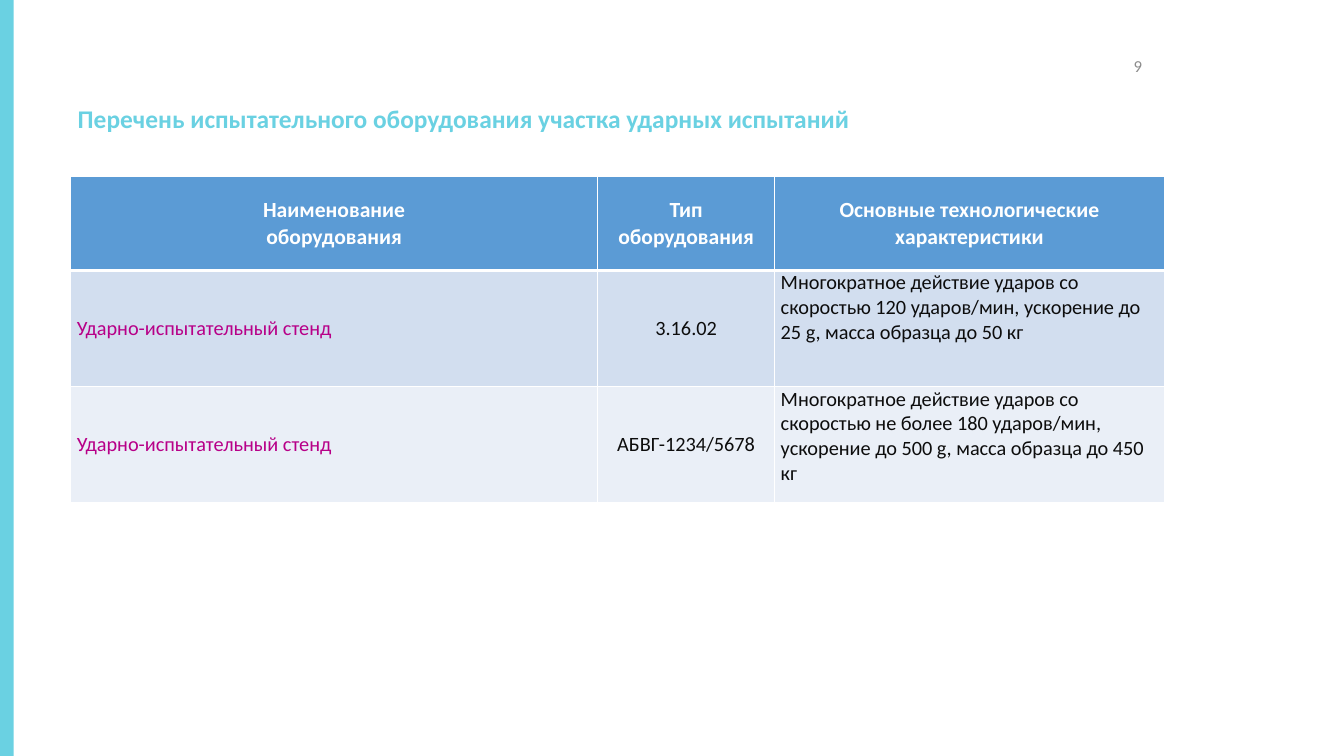
from lxml.etree import SubElement
from pptx import Presentation
from pptx.dml.color import RGBColor as RGB
from pptx.enum.shapes import MSO_SHAPE as SHAPE
from pptx.enum.text import MSO_ANCHOR as ANCHOR, MSO_AUTO_SIZE as AUTO, PP_ALIGN as ALIGN
from pptx.oxml.ns import qn
from pptx.util import Inches, Pt

COLORS = {
    "aqua": "6AD1E2", "gray": "8C8C8C", "white": "FFFFFF", "blue": "5B9BD5",
    "pink": "B70088", "ink": "0D0D0D", "band": "D2DEEF", "pale": "EAEFF7",
}
WIDTHS = [5.77, 1.93, 4.27]
HEIGHTS = [1.03, 1.27, 1.27]
FILLS = ["blue", "band", "pale"]
ALIGNS = [ALIGN.LEFT, ALIGN.CENTER, ALIGN.LEFT]
INKS = ["pink", "ink", "ink"]
ROWS = [
    ["Наименование\nоборудования", "Тип\nоборудования",
     "Основные технологические характеристики"],
    ["Ударно-испытательный стенд", "3.16.02",
     "Многократное действие ударов со скоростью 120 ударов/мин, "
     "ускорение до 25 g, масса образца до 50 кг"],
    ["Ударно-испытательный стенд", "АБВГ-1234/5678",
     "Многократное действие ударов со скоростью не более 180 ударов/мин, "
     "ускорение до 500 g, масса образца до 450 кг"],
]


def color(name):
    """Return the named colour."""
    return RGB.from_string(COLORS[name])


def write(frame, text, size, ink, align=ALIGN.LEFT, bold=False):
    """Fill a text frame with one styled paragraph."""
    para = frame.paragraphs[0]
    para.text = text
    para.alignment = align
    font = para.font
    font.name, font.size, font.bold = "Calibri", Pt(size), bold
    font.color.rgb = color(ink)
    return para


def add_bar(slide):
    """Draw the stripe along the left edge."""
    bar = slide.shapes.add_shape(SHAPE.RECTANGLE, 0, 0, Inches(0.15), Inches(8.27))
    bar.shadow.inherit = False
    bar.fill.solid()
    bar.fill.fore_color.rgb = color("aqua")
    bar.line.fill.background()


def set_title(slide, text):
    """Place and style the title."""
    title = slide.shapes.title
    title.left, title.top = Inches(0.75), Inches(1.03)
    title.width, title.height = Inches(10.34), Inches(0.58)
    frame = title.text_frame
    frame.auto_size = AUTO.NONE
    frame.vertical_anchor = ANCHOR.MIDDLE
    write(frame, text, 20, "aqua", bold=True).line_spacing = 0.9


def add_number(slide, text):
    """Add the page number."""
    box = slide.shapes.add_textbox(Inches(10.63), Inches(0.5), Inches(1.96), Inches(0.44))
    frame = box.text_frame
    frame.word_wrap = True
    frame.vertical_anchor = ANCHOR.MIDDLE
    write(frame, text, 13.2, "gray", ALIGN.RIGHT)


def set_edges(cell, top, bottom):
    """Give a cell white borders, with its own top and bottom widths."""
    props = cell._tc.get_or_add_tcPr()
    for side, width in zip("LRTB", (1, 1, top, bottom)):
        line = SubElement(props, qn(f"a:ln{side}"), w=str(Pt(width)))
        fill = SubElement(line, qn("a:solidFill"))
        SubElement(fill, qn("a:srgbClr"), val=COLORS["white"])


def set_cell(cell, text, row, col):
    """Style one cell by its row and column."""
    head = row == 0
    set_edges(cell, 3 if row == 1 else 1, 3 if head else 1)
    cell.fill.solid()
    cell.fill.fore_color.rgb = color(FILLS[row])
    if not (head and col == 0):
        cell.margin_left = cell.margin_right = Inches(0.07)
        cell.margin_top = cell.margin_bottom = 0
    cell.vertical_anchor = ANCHOR.MIDDLE if head or col < 2 else ANCHOR.TOP
    if head:
        write(cell.text_frame, text, 17, "white", ALIGN.CENTER, True)
    else:
        write(cell.text_frame, text, 16, INKS[col], ALIGNS[col])


def add_grid(slide):
    """Add the equipment table."""
    frame = slide.shapes.add_table(
        len(ROWS), len(WIDTHS), Inches(0.77), Inches(1.93),
        Inches(sum(WIDTHS)), Inches(sum(HEIGHTS)))
    table = frame.table
    for column, width in zip(table.columns, WIDTHS):
        column.width = Inches(width)
    for line, height in zip(table.rows, HEIGHTS):
        line.height = Inches(height)
    for row, texts in enumerate(ROWS):
        for col, text in enumerate(texts):
            set_cell(table.cell(row, col), text, row, col)


def main():
    """Build and save the slide."""
    deck = Presentation()
    deck.slide_width, deck.slide_height = Inches(14.7), Inches(8.27)
    slide = deck.slides.add_slide(deck.slide_layouts[5])
    add_bar(slide)
    set_title(slide, "Перечень испытательного оборудования участка ударных испытаний")
    add_number(slide, "9")
    add_grid(slide)
    deck.save("out.pptx")


if __name__ == "__main__":
    main()
